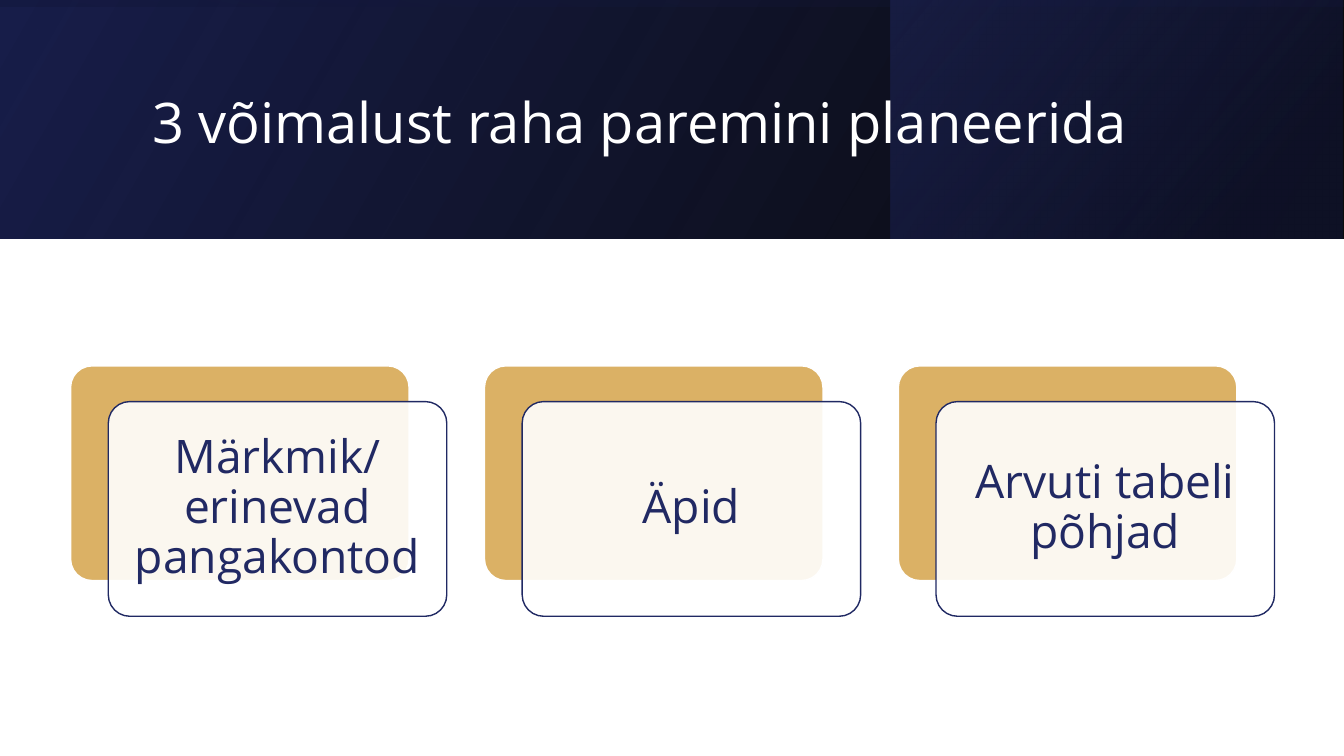
"""Build a slide with a dark title band and three layered cards."""
from lxml import etree
from pptx import Presentation
from pptx.dml.color import RGBColor
from pptx.enum.shapes import MSO_SHAPE as Preset
from pptx.enum.text import MSO_ANCHOR as Anchor, PP_ALIGN as Align
from pptx.oxml.ns import qn
from pptx.util import Cm, Pt

TITLE = "3 võimalust raha paremini planeerida"
CARDS = ["Märkmik/ erinevad pangakontod", "Äpid", "Arvuti tabeli põhjad"]

WIDTH, HEIGHT, BAND = 33.87, 19.05, 6.02
MIDDLE = (WIDTH - BAND) / 2
GRADIENTS = [
    {"place": (0, 0, WIDTH, BAND), "turn": 0, "angle": 330,
     "stops": [(0, "000000", 96), (100, "181E4A", 100)]},
    {"place": (22.45, 0, 11.38, BAND), "turn": 0, "angle": 320,
     "stops": [(0, "101431", 68), (19, "101431", 68), (100, "212963", 48)]},
    {"place": (MIDDLE, -MIDDLE, BAND, WIDTH), "turn": 270, "angle": 350,
     "stops": [(0, "181E4A", 16), (23, "181E4A", 16), (99, "000000", 45), (100, "000000", 45)]},
]

CARD_LEFT, CARD_TOP, CARD_PITCH = 1.78, 9.22, 10.43
CARD_WIDTH, CARD_HEIGHT = 8.53, 5.41
SHIFT_X, SHIFT_Y = 0.95, 0.9
TITLE_FORMAT = {"size": Pt(40), "name": "Open Sans"}
CARD_FORMAT = {"size": Pt(33), "name": "Open Sans"}


def paint(color_format, color):
    color_format.rgb = RGBColor.from_string(color)


def add_box(page, preset, place):
    box = page.shapes.add_shape(preset, *map(Cm, place))
    box.shadow.inherit = False
    return box


def add_gradient(page, place, turn, angle, stops):
    box = add_box(page, Preset.RECTANGLE, place)
    box.rotation = turn
    box.line.fill.background()
    properties = box._element.spPr
    properties.find(qn("a:xfrm")).set("flipH", "1")
    gradient = etree.Element(qn("a:gradFill"), rotWithShape="1")
    stop_list = etree.SubElement(gradient, qn("a:gsLst"))
    for position, color, opacity in stops:
        stop = etree.SubElement(stop_list, qn("a:gs"), pos=str(position * 1000))
        tone = etree.SubElement(stop, qn("a:srgbClr"), val=color)
        etree.SubElement(tone, qn("a:alpha"), val=str(opacity * 1000))
    etree.SubElement(gradient, qn("a:lin"), ang=str(angle * 60000), scaled="0")
    properties.find(qn("a:prstGeom")).addnext(gradient)


def add_panel(page, left, top, fill, line):
    box = add_box(page, Preset.ROUNDED_RECTANGLE, (left, top, CARD_WIDTH, CARD_HEIGHT))
    box.adjustments[0] = 0.1
    box.fill.solid()
    paint(box.fill.fore_color, fill)
    paint(box.line.color, line)
    box.line.width = Pt(1)
    return box


def write(box, text, margin, align, color, text_format):
    frame = box.text_frame
    frame.word_wrap = True
    frame.vertical_anchor = Anchor.MIDDLE
    for side in ("left", "top", "right", "bottom"):
        setattr(frame, f"margin_{side}", Cm(margin))
    para = frame.paragraphs[0]
    para.alignment = align
    para.line_spacing = 0.9
    span = para.add_run()
    span.text = text
    for name, value in text_format.items():
        setattr(span.font, name, value)
    paint(span.font.color, color)


def main():
    deck = Presentation()
    deck.slide_width, deck.slide_height = Cm(WIDTH), Cm(HEIGHT)
    page = deck.slides.add_slide(deck.slide_layouts[6])
    for gradient in GRADIENTS:
        add_gradient(page, **gradient)
    title = page.shapes.add_textbox(Cm(3.84), Cm(0.97), Cm(27), Cm(4.37))
    write(title, TITLE, 0, Align.LEFT, "FFFFFF", TITLE_FORMAT)
    for index, text in enumerate(CARDS):
        left = CARD_LEFT + index * CARD_PITCH
        add_panel(page, left, CARD_TOP, "DBB165", "FFFFFF")
        front = add_panel(page, left + SHIFT_X, CARD_TOP + SHIFT_Y, "FFFFFF", "202963")
        tone = front._element.spPr.find(qn("a:solidFill"))[0]
        etree.SubElement(tone, qn("a:alpha"), val="90000")
        write(front, text, 0.35, Align.CENTER, "212963", CARD_FORMAT)
    deck.save("out.pptx")


if __name__ == "__main__":
    main()
